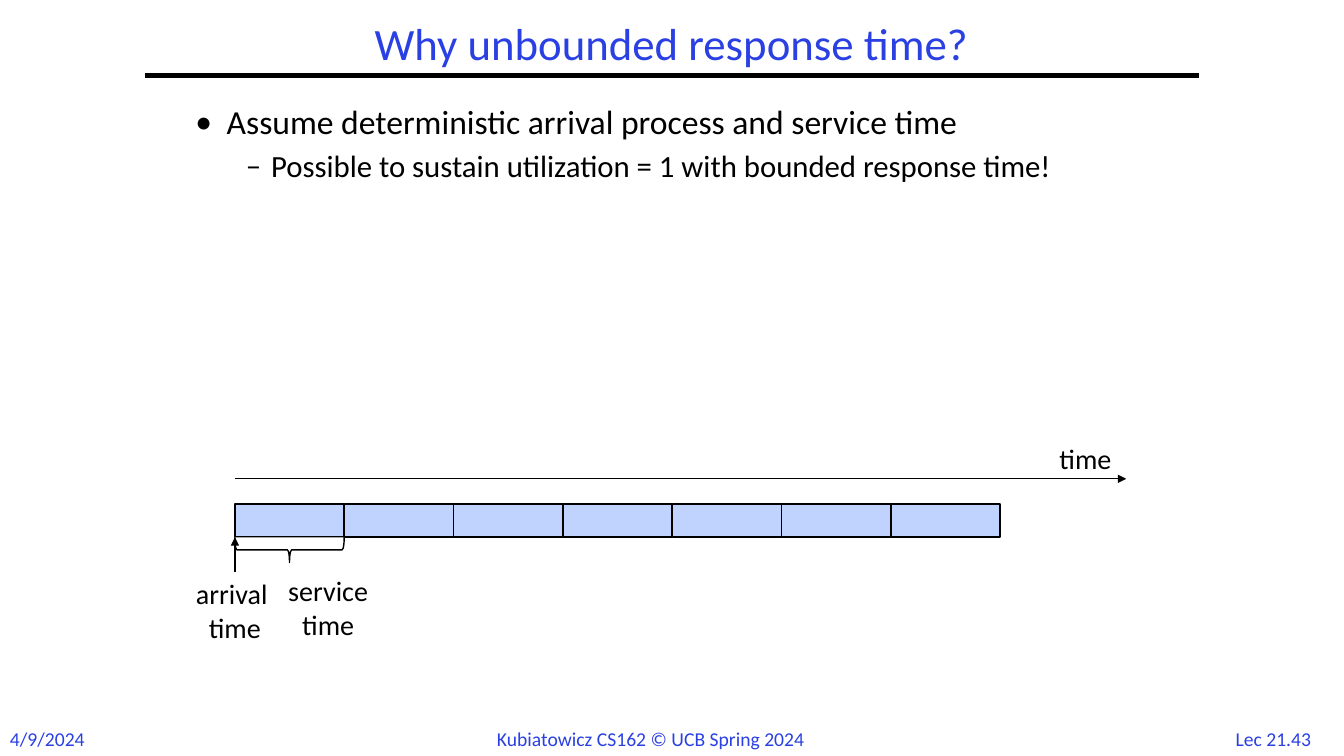
"""Build the slide on unbounded response time."""
from pptx import Presentation
from pptx.dml.color import RGBColor
from pptx.enum.shapes import MSO_CONNECTOR, MSO_SHAPE
from pptx.enum.text import MSO_ANCHOR, MSO_AUTO_SIZE, PP_ALIGN
from pptx.oxml.ns import qn
from pptx.util import Inches, Pt
from lxml import etree

BLUE = RGBColor(0x2A, 0x40, 0xE2)
PALE = RGBColor(0xC0, 0xD2, 0xFE)
BLACK = RGBColor(0, 0, 0)
WHITE = RGBColor(255, 255, 255)
LEFT, MID = PP_ALIGN.LEFT, PP_ALIGN.CENTER
RECT, BRACE = MSO_SHAPE.RECTANGLE, MSO_SHAPE.LEFT_BRACE
LINE = MSO_CONNECTOR.STRAIGHT

TITLE = "Why unbounded response time?"
POINTS = [
    ("Assume deterministic arrival process and service time",
     {"char": "•", "size": 24, "left": 0.31, "hang": 0.31, "gap": 0}),
    ("Possible to sustain utilization = 1 with bounded response time!",
     {"char": "–", "size": 22, "left": 0.75, "hang": 0.25, "gap": 6.6}),
]
FOOT = {"size": Pt(14), "color": BLUE}
LABEL = {"size": Pt(20), "color": BLACK}
TEXTS = [
    ("Lec 21.43", (12.09, 7.16, 1.08, 0.33), MID, FOOT),
    ("4/9/2024", (0, 7.16, 0.96, 0.34), LEFT, FOOT),
    ("Kubiatowicz CS162 © UCB Spring 2024", (4.83, 7.16, 3.68, 0.34), LEFT, FOOT),
    ("time", (10.41, 4.33, 0.73, 0.44), LEFT, LABEL),
    ("arrival \vtime", (1.81, 5.67, 1.04, 0.77), MID, LABEL),
    ("service\vtime", (2.71, 5.64, 1.09, 0.77), MID, LABEL),
]
START, END, COUNT = 2.33, 9.92, 7
TOP, HIGH, DEEP = 5, 0.33, 0.25
STEP = (END - START) / COUNT
LINES = [
    ((1.44, 0.75, 11.89, 0.75), 3, False),
    ((START, 4.75, 11.17, 4.75), 1, True),
    ((START, 5.67, START, TOP + HIGH), 1, True),
]


def style(font, form):
    """Apply a dict of format values to a font."""
    font.name = "Calibri"
    for key, value in form.items():
        if key == "color":
            font.color.rgb = value
        else:
            setattr(font, key, value)


def add_text(slide, text, area, align, form):
    """Add a label that does not wrap."""
    frame = slide.shapes.add_textbox(*map(Inches, area)).text_frame
    frame.word_wrap = False
    para = frame.paragraphs[0]
    para.text, para.alignment = text, align
    for run in para.runs:
        style(run.font, form)


def add_line(slide, ends, width, arrow):
    """Add a black line, with an arrowhead if asked."""
    line = slide.shapes.add_connector(LINE, *map(Inches, ends))
    line.line.color.rgb, line.line.width = BLACK, Pt(width)
    props = line._element.spPr
    if arrow:
        etree.SubElement(props.find(qn("a:ln")), qn("a:tailEnd"), type="triangle")
    etree.SubElement(props, qn("a:effectLst"))


def add_part(slide, kind, area, fill):
    """Add an outlined shape."""
    part = slide.shapes.add_shape(kind, *map(Inches, area))
    part.shadow.inherit = False
    part.fill.solid()
    part.fill.fore_color.rgb = fill
    part.line.color.rgb, part.line.width = BLACK, Pt(1)
    return part


def add_title(slide):
    """Place and format the title."""
    title = slide.shapes.title
    title.left, title.top, title.width, title.height = map(
        Inches, (1.44, 0.17, 10.44, 0.58))
    frame = title.text_frame
    frame.text = TITLE
    frame.auto_size = MSO_AUTO_SIZE.NONE
    frame.vertical_anchor = MSO_ANCHOR.MIDDLE
    para = frame.paragraphs[0]
    para.alignment, para.line_spacing = MID, 0.9
    style(para.runs[0].font, {"size": Pt(32), "color": BLUE})


def add_points(slide):
    """Add the bulleted text."""
    frame = slide.shapes.add_textbox(*map(Inches, (1.84, 1, 9.49, 2.83))).text_frame
    frame.word_wrap = True
    for rank, (text, form) in enumerate(POINTS):
        para = frame.add_paragraph() if rank else frame.paragraphs[0]
        para.text, para.level = text, rank
        para.line_spacing, para.space_before = 0.9, Pt(form["gap"])
        props = para._p.get_or_add_pPr()
        props.set("marL", str(Inches(form["left"])))
        props.set("indent", str(-Inches(form["hang"])))
        etree.SubElement(props, qn("a:buFont"), typeface="Calibri")
        etree.SubElement(props, qn("a:buChar"), char=form["char"])
        style(para.runs[0].font, {"size": Pt(form["size"]), "color": BLACK})


def main():
    """Build and save the slide."""
    deck = Presentation()
    deck.slide_width, deck.slide_height = Inches(13.33), Inches(7.5)
    slide = deck.slides.add_slide(deck.slide_layouts[5])
    add_title(slide)
    add_points(slide)
    for col in range(COUNT):
        add_part(slide, RECT, (START + col * STEP, TOP, STEP, HIGH), PALE)
    side = START + (STEP - DEEP) / 2
    rise = TOP + HIGH + (DEEP - STEP) / 2
    add_part(slide, BRACE, (side, rise, DEEP, STEP), WHITE).rotation = 270
    for item in LINES:
        add_line(slide, *item)
    for item in TEXTS:
        add_text(slide, *item)
    deck.save("out.pptx")


if __name__ == "__main__":
    main()
